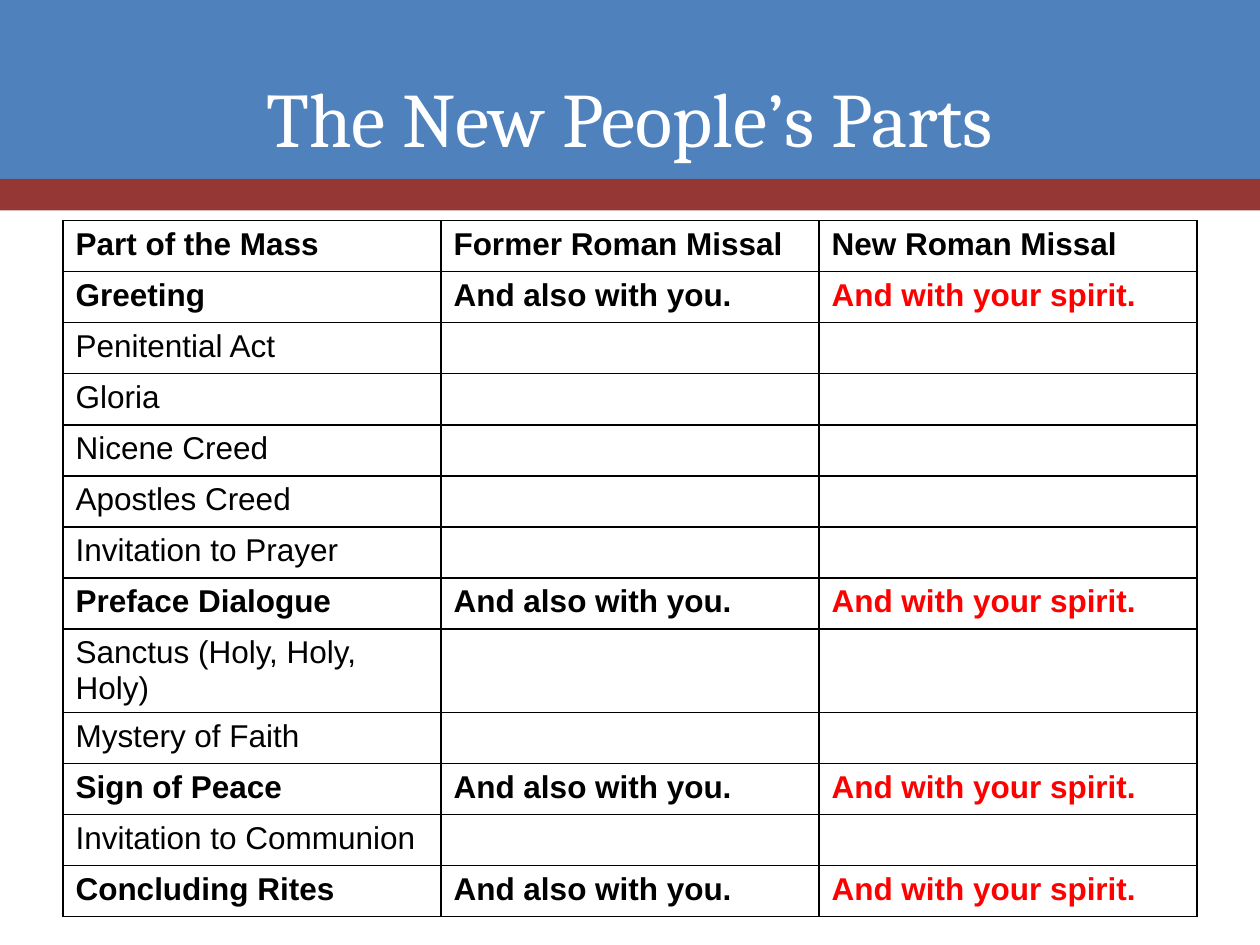
"""Build a slide comparing the people's parts in the former and new Roman Missal."""
from lxml import etree
from pptx import Presentation
from pptx import util as u
from pptx.dml.color import RGBColor
from pptx.enum import shapes, text
from pptx.oxml import ns

COLORS = {"blue": "4F81BD", "maroon": "953735", "white": "FFFFFF",
          "black": "000000", "red": "FF0000"}
TITLE = "The New People’s Parts"
HEADINGS = ("Part of the Mass", "Former Roman Missal", "New Roman Missal")
FORMER, NEW = "And also with you.", "And with your spirit."
PARTS = ["Greeting", "Penitential Act", "Gloria", "Nicene Creed", "Apostles Creed",
         "Invitation to Prayer", "Preface Dialogue", "Sanctus (Holy, Holy, Holy)",
         "Mystery of Faith", "Sign of Peace", "Invitation to Communion",
         "Concluding Rites"]
CHANGED = {"Greeting", "Preface Dialogue", "Sign of Peace", "Concluding Rites"}
BANDS = [("blue", 1.42), ("maroon", 0.25)]
WIDTH, HEIGHT, MARGIN = 10, 7.5, 0.5
TABLE_TOP, TABLE_HEIGHT = 1.75, 5.27


def rgb(name):
    return RGBColor.from_string(COLORS[name])


def write(frame, words, size=18, font="Arial", color="black", bold=False, align=None):
    paragraph = frame.paragraphs[0]
    paragraph.alignment = align
    run = paragraph.add_run()
    run.text = words
    run.font.size, run.font.name, run.font.bold = u.Pt(size), font, bold
    run.font.color.rgb = rgb(color)


def add_bands(slide):
    header = slide.shapes.add_group_shape()
    top = 0
    for color, height in BANDS:
        band = header.shapes.add_shape(shapes.MSO_SHAPE.RECTANGLE, 0, u.Inches(top),
                                       u.Inches(WIDTH), u.Inches(height))
        band.shadow.inherit = False
        band.fill.solid()
        band.fill.fore_color.rgb = rgb(color)
        band.line.fill.background()
        top += height
    slide.shapes.title.element.addprevious(header.element)


def add_title(slide):
    title = slide.shapes.title
    title.left, title.top = u.Inches(MARGIN), u.Inches(0.3)
    title.width, title.height = u.Inches(WIDTH - 2 * MARGIN), u.Inches(1.25)
    title.text_frame.vertical_anchor = text.MSO_ANCHOR.MIDDLE
    write(title.text_frame, TITLE, size=44, font="Cambria", color="white",
          align=text.PP_ALIGN.CENTER)


def add_borders(cell):
    properties = cell._tc.get_or_add_tcPr()
    for side in ("a:lnL", "a:lnR", "a:lnT", "a:lnB"):
        line = etree.SubElement(properties, ns.qn(side), w=str(u.Pt(1)))
        fill = etree.SubElement(line, ns.qn("a:solidFill"))
        etree.SubElement(fill, ns.qn("a:srgbClr"), val=COLORS["black"])


def add_missal_table(slide):
    rows = [HEADINGS] + [(part, FORMER, NEW) if part in CHANGED else (part, "", "")
                         for part in PARTS]
    table = slide.shapes.add_table(
        len(rows), len(HEADINGS), u.Inches(MARGIN), u.Inches(TABLE_TOP),
        u.Inches(WIDTH - 2 * MARGIN), u.Inches(TABLE_HEIGHT)).table
    table.first_row = table.horz_banding = False
    for r, row in enumerate(rows):
        for c, words in enumerate(row):
            cell = table.cell(r, c)
            add_borders(cell)
            cell.fill.background()
            if words:
                write(cell.text_frame, words, bold=bool(row[1]),
                      color="red" if words == NEW else "black")


def main():
    deck = Presentation()
    deck.slide_width, deck.slide_height = u.Inches(WIDTH), u.Inches(HEIGHT)
    slide = deck.slides.add_slide(deck.slide_layouts.get_by_name("Title Only"))
    add_bands(slide)
    add_title(slide)
    add_missal_table(slide)
    deck.save("out.pptx")


if __name__ == "__main__":
    main()
